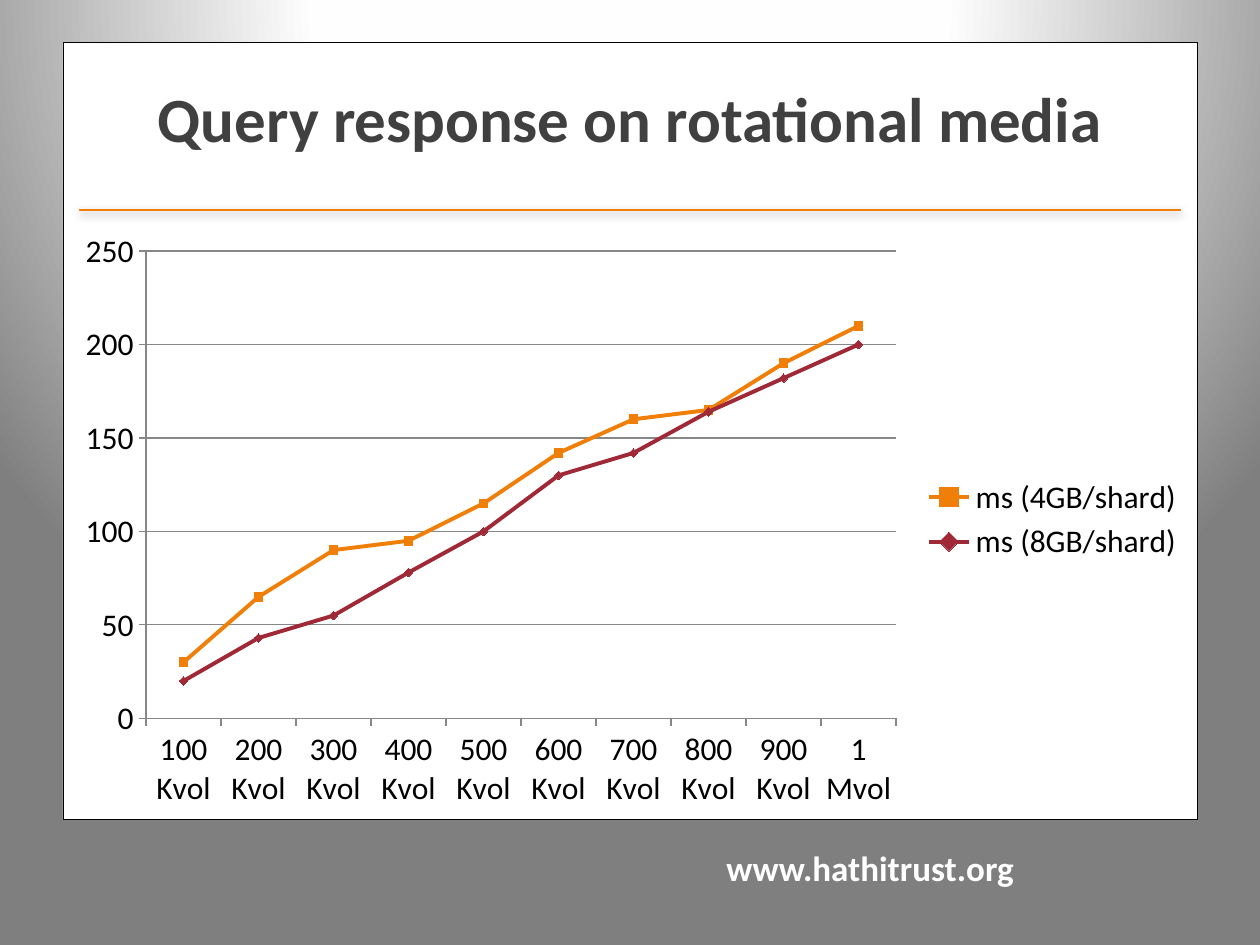
from lxml.etree import SubElement
from pptx import Presentation
from pptx.chart.data import CategoryChartData
from pptx.dml.color import RGBColor
from pptx.enum.chart import XL_CHART_TYPE, XL_LEGEND_POSITION, XL_MARKER_STYLE, XL_TICK_MARK
from pptx.enum.shapes import MSO_CONNECTOR, MSO_SHAPE
from pptx.enum.text import MSO_ANCHOR, MSO_AUTO_SIZE, PP_ALIGN
from pptx.oxml import parse_xml
from pptx.oxml.ns import nsdecls, qn
from pptx.util import Emu, Pt

PX_PER_INCH = 126
COLORS = {
    "panel": "FFFFFF",
    "border": "000000",
    "rule": "F07F09",
    "title": "404040",
    "address": "FFFFFF",
    "chart_text": "000000",
    "grid": "878787",
    "small_shard": "F07F09",
    "large_shard": "9F2936",
}
VOLUMES = [f"{n} Kvol" for n in range(100, 1000, 100)] + ["1 Mvol"]
RESPONSES = [
    ("ms (4GB/shard)", "small_shard", XL_MARKER_STYLE.SQUARE,
     [30, 65, 90, 95, 115, 142, 160, 165, 190, 210]),
    ("ms (8GB/shard)", "large_shard", XL_MARKER_STYLE.DIAMOND,
     [20, 43, 55, 78, 100, 130, 142, 164, 182, 200]),
]


def px(*lengths):
    """Turn lengths in px into EMU."""
    return [Emu(round(length * 914400 / PX_PER_INCH)) for length in lengths]


def rgb(part):
    """Give the colour of a named part."""
    return RGBColor.from_string(COLORS[part])


def apply_format(target, values):
    """Set each attribute of the target from a dict."""
    for name, value in values.items():
        setattr(target, name, value)


def style_line(line, part, width):
    """Give a line its colour and its width in points."""
    line.color.rgb = rgb(part)
    line.width = Pt(width)


def style_font(font, part, size, bold=False):
    """Give a font its face, size, weight and colour."""
    apply_format(font, {"name": "Calibri", "size": Pt(size), "bold": bold})
    font.color.rgb = rgb(part)


def add_backdrop(slide):
    """Fill the background with a gradient that glows from the top."""
    fill = slide.background.fill
    fill.gradient()
    properties = slide.background._cSld.find(qn("p:bg")).find(qn("p:bgPr"))
    stops = "".join(
        f'<a:gs pos="{at * 1000}"><a:srgbClr val="{color}"/></a:gs>'
        for at, color in [(0, "FFFFFF"), (40, "FEFEFE"), (100, "7F7F7F")]
    )
    glow = parse_xml(
        f'<a:gradFill {nsdecls("a")} rotWithShape="1"><a:gsLst>{stops}</a:gsLst>'
        '<a:path path="circle"><a:fillToRect l="50000" t="-80000" r="50000" b="180000"/>'
        "</a:path></a:gradFill>"
    )
    properties.replace(properties.find(qn("a:gradFill")), glow)


def add_panel(slide, left, top, width, height):
    """Place the white panel and the shaded rule below its title."""
    panel = slide.shapes.add_shape(MSO_SHAPE.RECTANGLE, *px(left, top, width, height))
    panel.shadow.inherit = False
    panel.fill.solid()
    panel.fill.fore_color.rgb = rgb("panel")
    style_line(panel.line, "border", 0.25)

    inset, drop = 16, 168
    rule = slide.shapes.add_connector(
        MSO_CONNECTOR.STRAIGHT,
        *px(left + inset, top + drop, left + width - inset, top + drop),
    )
    style_line(rule.line, "rule", 1)
    effects = SubElement(rule._element.spPr, qn("a:effectLst"))
    shade = SubElement(effects, qn("a:outerShdw"), blurRad="63500", dist="23000",
                       dir="5400000", rotWithShape="0")
    black = SubElement(shade, qn("a:srgbClr"), val="000000")
    SubElement(black, qn("a:alpha"), val="35000")


def add_label(slide, box, text, part, size, frame_format, align):
    """Place one bold line of text in the box."""
    frame = slide.shapes.add_textbox(*px(*box)).text_frame
    apply_format(frame, {"word_wrap": True, **frame_format})
    paragraph = frame.paragraphs[0]
    paragraph.alignment = align
    run = paragraph.add_run()
    run.text = text
    style_font(run.font, part, size, bold=True)


def add_response_chart(slide, left, top, width, height):
    """Place the line chart of response times by volume count."""
    data = CategoryChartData()
    data.categories = VOLUMES
    for name, _, _, times in RESPONSES:
        data.add_series(name, times)
    chart = slide.shapes.add_chart(
        XL_CHART_TYPE.LINE_MARKERS, *px(left, top, width, height), data
    ).chart
    apply_format(chart, {"has_title": False, "has_legend": True})
    apply_format(chart.legend, {"position": XL_LEGEND_POSITION.RIGHT, "include_in_layout": False})
    style_font(chart.font, "chart_text", 18)
    chart.plots[0].vary_by_categories = False

    apply_format(chart.value_axis, {"minimum_scale": 0, "maximum_scale": 250, "major_unit": 50,
                                    "has_major_gridlines": True})
    style_line(chart.value_axis.major_gridlines.format.line, "grid", 0.75)
    for axis in (chart.category_axis, chart.value_axis):
        apply_format(axis, {"major_tick_mark": XL_TICK_MARK.OUTSIDE,
                            "minor_tick_mark": XL_TICK_MARK.NONE})
        style_line(axis.format.line, "grid", 0.75)

    for series, (_, part, symbol, _) in zip(chart.plots[0].series, RESPONSES):
        series.smooth = False
        style_line(series.format.line, part, 2.25)
        apply_format(series.marker, {"style": symbol, "size": 5})
        series.marker.format.fill.solid()
        series.marker.format.fill.fore_color.rgb = rgb(part)
        style_line(series.marker.format.line, part, 0.75)


def main():
    """Build the slide and save it."""
    presentation = Presentation()
    slide_width, slide_height = px(1260, 945)
    apply_format(presentation, {"slide_width": slide_width, "slide_height": slide_height})
    slide = presentation.slides.add_slide(presentation.slide_layouts[6])
    add_backdrop(slide)
    add_panel(slide, 63, 42, 1134, 777)
    add_label(slide, (714, 840, 315, 55), "www.hathitrust.org", "address", 20,
              {"auto_size": MSO_AUTO_SIZE.SHAPE_TO_FIT_TEXT}, PP_ALIGN.LEFT)
    add_label(slide, (63, 38, 1134, 158), "Query response on rotational media", "title", 36,
              {"vertical_anchor": MSO_ANCHOR.MIDDLE}, PP_ALIGN.CENTER)
    add_response_chart(slide, 63, 220, 1134, 599)
    presentation.save("out.pptx")


if __name__ == "__main__":
    main()
